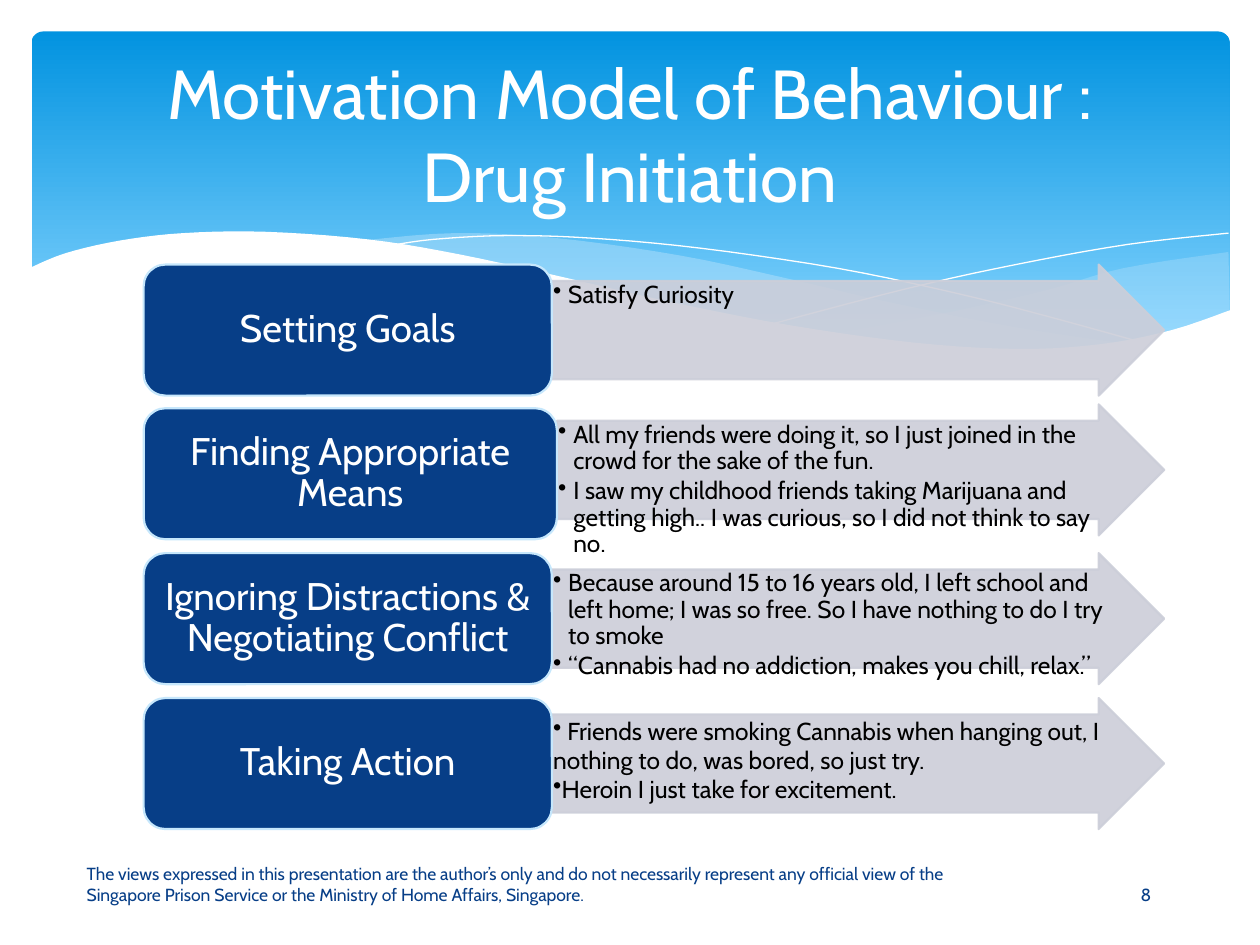
from lxml.etree import SubElement
from pptx import Presentation
from pptx.dml.color import RGBColor
from pptx.enum.shapes import MSO_SHAPE
from pptx.enum.text import MSO_ANCHOR, PP_ALIGN
from pptx.oxml.ns import qn
from pptx.util import Emu, Pt

PX = 9144  # 100 px to the inch
FONT = "Cabin"
SKY_TOP = RGBColor(0x02, 0x93, 0xE0)
SKY_BOTTOM = RGBColor(0x83, 0xD3, 0xFE)
PALE_BLUE = RGBColor(0xC6, 0xE7, 0xFC)
NAVY = RGBColor(0x07, 0x3E, 0x87)
GREY = RGBColor(0xCC, 0xCE, 0xD9)
WHITE = RGBColor(0xFF, 0xFF, 0xFF)
BLACK = RGBColor(0x00, 0x00, 0x00)

# Each wave is a list of edges; an edge is a smooth curve through its points.
LIGHT_WAVE = [
    [(975, 200), (891, 213), (832, 230), (753, 248), (661, 265)],
    [(661, 265), (719, 271), (781, 277), (835, 277), (897, 270), (949, 257), (976, 247)],
]
LONG_WAVE = [
    [(893, 273), (807, 260), (706, 240), (629, 222), (541, 203), (442, 189), (361, 185), (286, 191)],
    [(286, 191), (383, 207), (449, 222), (566, 248), (665, 266), (773, 277), (838, 278), (893, 273)],
]
FALLING_LINE = [[(309, 195), (344, 190), (401, 187), (469, 189), (556, 197), (665, 213),
                 (760, 233), (831, 251), (907, 272)]]
RISING_LINE = [[(613, 257), (720, 229), (806, 210), (895, 194), (975, 185)]]
WHITE_WAVE = [
    [(977, 246), (930, 262), (875, 273), (809, 277), (726, 272), (626, 258), (529, 239), (447, 220),
     (365, 202), (292, 190), (211, 184), (146, 185), (95, 191), (52, 201), (23, 213)],
    [(23, 329), (977, 329)],
]

# label, points, hanging bullets, left edge of the arrow, lift of the arrow
STEPS = [
    ("Setting Goals", ["Satisfy Curiosity"], True, 438, 0),
    ("Finding Appropriate Means",
     ["All my friends were doing it, so I just joined in the crowd for the sake of the fun.",
      "I saw my childhood friends taking Marijuana and getting high.. I was curious, "
      "so I did not think to say no."], True, 442, 3),
    ("Ignoring Distractions & Negotiating Conflict",
     ["Because around 15 to 16 years old, I left school and left home; I was so free. "
      "So I have nothing to do I try to smoke",
      "“Cannabis had no addiction, makes you chill, relax.”"], True, 438, 0),
    ("Taking Action",
     [" Friends were smoking Cannabis when hanging out, I nothing to do, was bored, so just try.",
      "Heroin I just take for excitement."], False, 438, 0),
]


def px(*lengths):
    return [Emu(length * PX) for length in lengths]


def set_alpha(fill, percent):
    """Make a solid fill partly transparent."""
    color = fill._xPr.find(qn("a:solidFill"))[0]
    SubElement(color, qn("a:alpha")).set("val", str(percent * 1000))


def smooth(points, parts=5):
    """Catmull-Rom curve through the points."""
    padded = [points[0], *points, points[-1]]
    curve = [points[0]]
    for a, b, c, d in zip(padded, padded[1:], padded[2:], padded[3:]):
        for step in range(1, parts + 1):
            t = step / parts
            curve.append(tuple(
                (2 * q + (r - p) * t + (2 * p - 5 * q + 4 * r - s) * t ** 2
                 + (3 * q - p - 3 * r + s) * t ** 3) / 2
                for p, q, r, s in zip(a, b, c, d)))
    return curve


def add_wave(slide, edges, color=None, alpha=100):
    """Filled wave, or a white hairline when no colour is given."""
    points = [(round(x * PX), round(y * PX)) for edge in edges for x, y in smooth(edge)]
    builder = slide.shapes.build_freeform(*points[0])
    builder.add_line_segments(points[1:], close=color is not None)
    shape = builder.convert_to_shape()
    shape.shadow.inherit = False
    if color is None:
        shape.fill.background()
        shape.line.color.rgb = WHITE
        shape.line.width = Pt(0)
    else:
        shape.fill.solid()
        shape.fill.fore_color.rgb = color
        set_alpha(shape.fill, alpha)
        shape.line.fill.background()


def add_box(slide, kind, box, color, line_color):
    shape = slide.shapes.add_shape(kind, *px(*box))
    shape.shadow.inherit = False
    shape.fill.solid()
    shape.fill.fore_color.rgb = color
    shape.line.color.rgb = line_color
    shape.line.width = Pt(1.25)
    return shape


def style(paragraph, size, color, align=PP_ALIGN.LEFT):
    paragraph.alignment = align
    paragraph.font.name = FONT
    paragraph.font.size = Pt(size)
    paragraph.font.color.rgb = color


def add_text(slide, box, text, size, color, align=PP_ALIGN.LEFT):
    frame = slide.shapes.add_textbox(*px(*box)).text_frame
    frame.word_wrap = True
    frame.vertical_anchor = MSO_ANCHOR.MIDDLE
    frame.text = text
    for paragraph in frame.paragraphs:
        style(paragraph, size, color, align)


def add_banner(slide, left, top, width, height):
    sky = slide.shapes.add_shape(MSO_SHAPE.ROUNDED_RECTANGLE, *px(left, top, width, height))
    sky.adjustments[0] = 0.034
    sky.shadow.inherit = False
    sky.line.fill.background()
    sky.fill.gradient()
    sky.fill.gradient_angle = 270
    for stop, color, position in zip(sky.fill.gradient_stops, (SKY_TOP, SKY_BOTTOM), (0, 0.9)):
        stop.color.rgb = color
        stop.position = position
    add_wave(slide, LIGHT_WAVE, PALE_BLUE, 29)
    add_wave(slide, LONG_WAVE, PALE_BLUE, 40)
    add_wave(slide, FALLING_LINE)
    add_wave(slide, RISING_LINE)
    add_wave(slide, WHITE_WAVE, WHITE)


def add_points(frame, points, hanging):
    frame.word_wrap = True
    frame.vertical_anchor = MSO_ANCHOR.TOP
    frame.margin_left = frame.margin_right = frame.margin_top = frame.margin_bottom = px(1)[0]
    for index, point in enumerate(points):
        paragraph = frame.add_paragraph() if index else frame.paragraphs[0]
        paragraph.text = point
        style(paragraph, 14, BLACK)
        properties = paragraph._p.get_or_add_pPr()
        if hanging:
            paragraph.line_spacing = 0.9
            paragraph.space_after = Pt(2)
            properties.set("marL", str(12 * PX))
            properties.set("indent", str(-12 * PX))
        bullet = properties.makeelement(qn("a:buChar"), {"char": "•"})
        properties.insert_element_before(bullet, "a:tabLst", "a:defRPr", "a:extLst")


def add_step(slide, left, top, right, height, step):
    label, points, hanging, split, lift = step
    arrow = add_box(slide, MSO_SHAPE.RIGHT_ARROW, (split, top - lift, right - split, height), GREY, GREY)
    arrow.adjustments[0] = 0.75
    set_alpha(arrow.fill, 90)
    set_alpha(arrow.line.fill, 90)
    add_points(arrow.text_frame, points, hanging)

    block = add_box(slide, MSO_SHAPE.ROUNDED_RECTANGLE, (left, top, split - left, height), NAVY, PALE_BLUE)
    frame = block.text_frame
    frame.word_wrap = True
    frame.margin_left = frame.margin_right = px(9)[0]
    frame.vertical_anchor = MSO_ANCHOR.MIDDLE
    frame.text = label
    style(frame.paragraphs[0], 22, WHITE, PP_ALIGN.CENTER)
    frame.paragraphs[0].line_spacing = 0.9


def add_steps(slide, left, top, right, height, step_height):
    for index, step in enumerate(STEPS):
        step_top = top + (height - step_height) * index // (len(STEPS) - 1)
        add_step(slide, left, step_top, right, step_height, step)


def add_footer(slide, left, top):
    add_text(slide, (left, top, 756, 40),
             "The views expressed in this presentation are the author’s only and do not necessarily "
             "represent any official view of the Singapore Prison Service or the Ministry of Home "
             "Affairs, Singapore.", 10, NAVY)
    add_text(slide, (left + 787, top + 8, 127, 40), "8", 10, NAVY, PP_ALIGN.CENTER)


def main():
    presentation = Presentation()
    presentation.slide_width, presentation.slide_height = px(1000, 750)
    slide = presentation.slides.add_slide(presentation.slide_layouts[6])
    add_banner(slide, 25, 25, 951, 270)
    add_text(slide, (50, 37, 900, 137), "Motivation Model of Behaviour :\vDrug Initiation",
             39.6, WHITE, PP_ALIGN.CENTER)
    add_steps(slide, 114, 210, 924, 448, 104)
    add_footer(slide, 59, 682)
    presentation.save("out.pptx")


if __name__ == "__main__":
    main()
